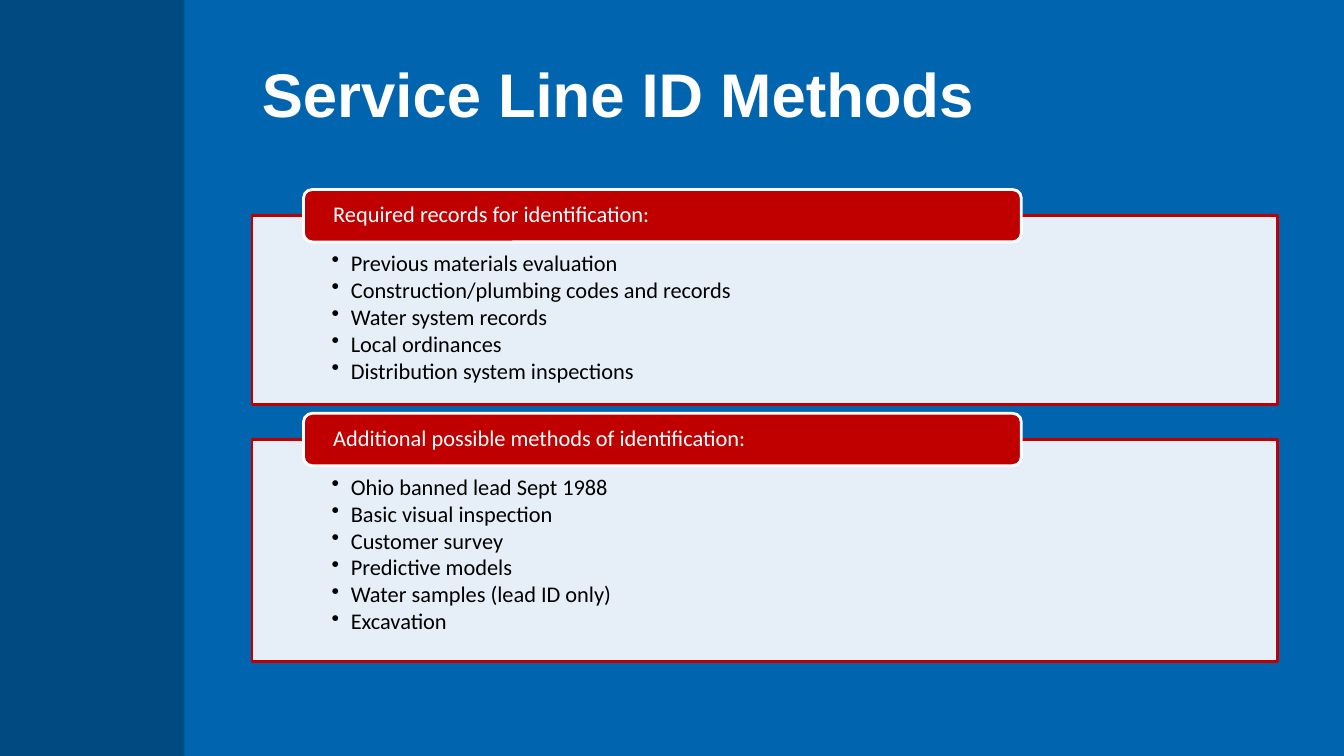
from pptx import Presentation
from pptx.dml.color import RGBColor
from pptx.enum.shapes import MSO_SHAPE as Shape
from pptx.enum.text import MSO_ANCHOR as Anchor, PP_ALIGN as Align
from pptx.oxml.ns import qn
from pptx.util import Inches, Pt
from lxml import etree

BLUE = RGBColor(0x00, 0x65, 0xAE)
NAVY = RGBColor(0x00, 0x4A, 0x82)
RED = RGBColor(0xC0, 0x00, 0x00)
WHITE = RGBColor(0xFF, 0xFF, 0xFF)
BLACK = RGBColor(0x00, 0x00, 0x00)

prs = Presentation()
prs.slide_width, prs.slide_height = Inches(13.33), Inches(7.5)
slide = prs.slides.add_slide(prs.slide_layouts[6])
slide.background.fill.solid()
slide.background.fill.fore_color.rgb = BLUE


def add_block(kind, left, top, width, height, fill, line=None):
    block = slide.shapes.add_shape(
        kind, Inches(left), Inches(top), Inches(width), Inches(height))
    block.shadow.inherit = False
    block.fill.solid()
    block.fill.fore_color.rgb = fill
    if line is None:
        block.line.fill.background()
    else:
        block.line.color.rgb = line
        block.line.width = Pt(2)
    return block


def add_text(block, lines, color, anchor, margins, space_after, bullet=False):
    frame = block.text_frame
    frame.word_wrap = True
    frame.vertical_anchor = anchor
    (frame.margin_left, frame.margin_top,
     frame.margin_right, frame.margin_bottom) = map(Inches, margins)
    frame.text = "\n".join(lines)
    for paragraph in frame.paragraphs:
        paragraph.alignment = Align.LEFT
        paragraph.line_spacing = 0.9
        paragraph.space_after = Pt(space_after)
        if bullet:
            props = paragraph._p.get_or_add_pPr()
            props.set("marL", str(Inches(0.19)))
            props.set("indent", str(-Inches(0.19)))
            etree.SubElement(props, qn("a:buChar")).set("char", "•")
        paragraph.font.size = Pt(16)
        paragraph.font.name = "Calibri"
        paragraph.font.color.rgb = color


# Side band
add_block(Shape.RECTANGLE, 0, 0, 1.83, 7.5, NAVY)

# Title
title = slide.shapes.add_textbox(Inches(2.5), Inches(0.3), Inches(10.17), Inches(1.25))
title.text_frame.word_wrap = True
title.text_frame.vertical_anchor = Anchor.MIDDLE
heading = title.text_frame.paragraphs[0]
heading.text = "Service Line ID Methods"
heading.font.size = Pt(44)
heading.font.name = "Arial"
heading.font.bold = True
heading.font.color.rgb = WHITE

# Method panels: label, top, height, methods
panels = [
    ("Required records for identification:", 2.14, 1.87, [
        "Previous materials evaluation",
        "Construction/plumbing codes and records",
        "Water system records",
        "Local ordinances",
        "Distribution system inspections",
    ]),
    ("Additional possible methods of identification:", 4.36, 2.2, [
        "Ohio banned lead Sept 1988",
        "Basic visual inspection",
        "Customer survey",
        "Predictive models",
        "Water samples (lead ID only)",
        "Excavation",
    ]),
]

for label, top, height, methods in panels:
    panel = add_block(Shape.RECTANGLE, 2.5, top, 10.17, height, WHITE, RED)
    panel_color = panel.fill._xPr.find(qn("a:solidFill"))[0]
    etree.SubElement(panel_color, qn("a:alpha")).set("val", "90000")
    add_text(panel, methods, BLACK, Anchor.TOP, (0.79, 0.36, 0.79, 0.12), 2, bullet=True)

    # Label tab straddling the panel's top edge
    tab = add_block(Shape.ROUNDED_RECTANGLE, 3.01, top - 0.26, 7.12, 0.52, RED, WHITE)
    add_text(tab, [label], WHITE, Anchor.MIDDLE, (0.27, 0, 0.27, 0), 0)

prs.save("out.pptx")
